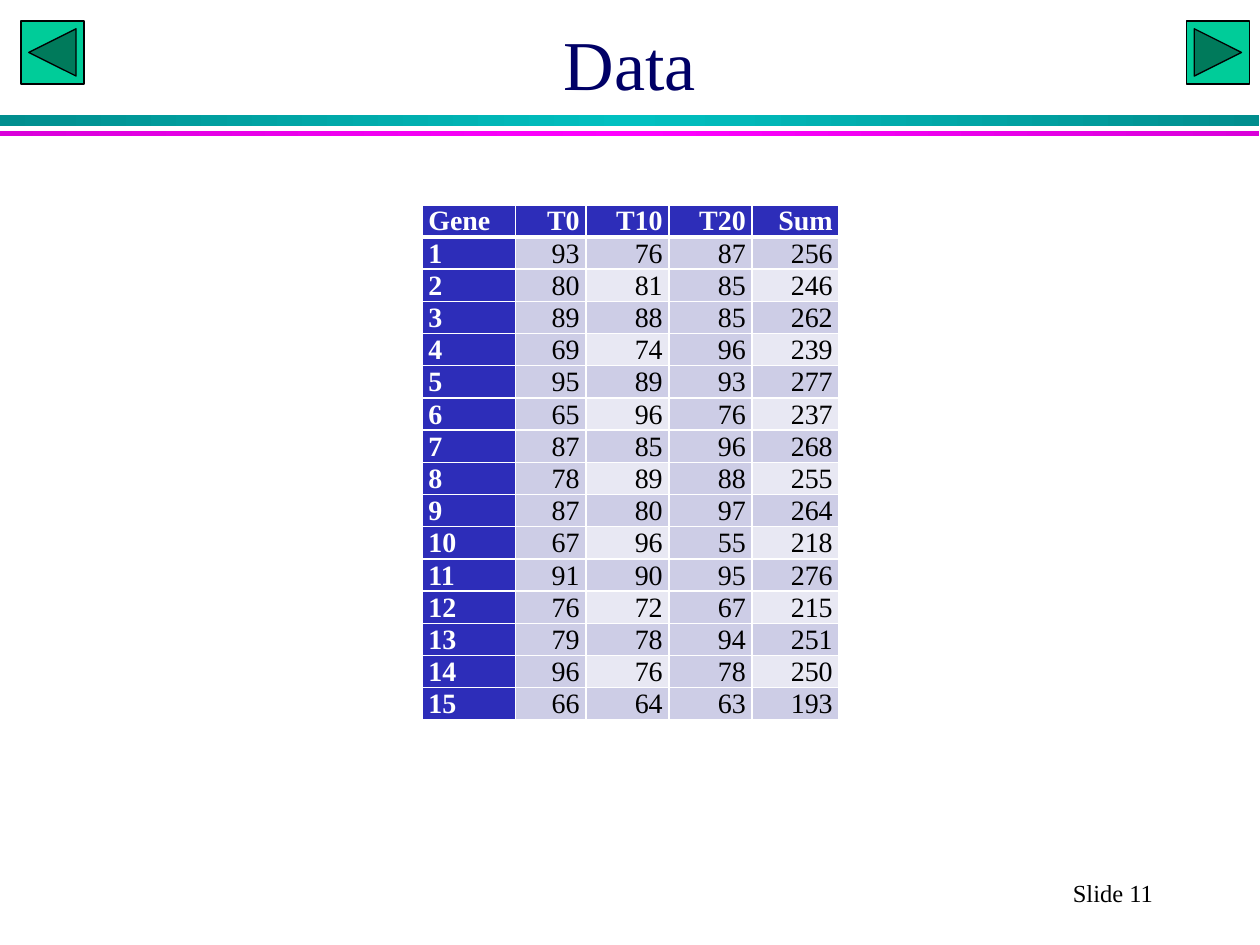
from copy import deepcopy

from lxml import etree
from pptx import Presentation
from pptx.dml.color import RGBColor
from pptx.enum.shapes import MSO_SHAPE
from pptx.enum.text import MSO_ANCHOR, PP_ALIGN
from pptx.oxml.ns import qn
from pptx.util import Pt

FONT = "Times New Roman"
NAVY = RGBColor(0x00, 0x00, 0x66)
BLACK = RGBColor(0x00, 0x00, 0x00)
WHITE = RGBColor(0xFF, 0xFF, 0xFF)
GREEN = RGBColor(0x00, 0xCC, 0x99)
DARK_TEAL = RGBColor(0x00, 0x8E, 0x8E)
TEAL = RGBColor(0x00, 0xC0, 0xC0)
DARK_MAGENTA = RGBColor(0xDA, 0x00, 0xDA)
MAGENTA = RGBColor(0xFF, 0x00, 0xFF)
HEADER_BLUE = RGBColor(0x2D, 0x2D, 0xB9)
BAND = RGBColor(0xCD, 0xCD, 0xE6)
LIGHT_BAND = RGBColor(0xE8, 0xE8, 0xF3)

HEADINGS = ["Gene", "T0", "T10", "T20", "Sum"]
MEASUREMENTS = [
    (93, 76, 87), (80, 81, 85), (89, 88, 85), (69, 74, 96), (95, 89, 93),
    (65, 96, 76), (87, 85, 96), (78, 89, 88), (87, 80, 97), (67, 96, 55),
    (91, 90, 95), (76, 72, 67), (79, 78, 94), (96, 76, 78), (66, 64, 63),
]
COLUMN_WIDTHS = [53.3, 40.3, 47.5, 47.5, 49.7]
ROW_HEIGHT = 18.4


def format_paragraph(paragraph, size, color, alignment, bold=False):
    paragraph.alignment = alignment
    paragraph.font.name = FONT
    paragraph.font.size = Pt(size)
    paragraph.font.color.rgb = color
    paragraph.font.bold = bold


def add_white_border(cell, side, width):
    """Draw one side of a cell: lnL, lnR, lnT or lnB, called in that order."""
    line = etree.SubElement(cell._tc.get_or_add_tcPr(), qn(f"a:{side}"), w=str(Pt(width)))
    fill = etree.SubElement(line, qn("a:solidFill"))
    etree.SubElement(fill, qn("a:srgbClr"), val=str(WHITE))


presentation = Presentation()
presentation.slide_width = Pt(720)
presentation.slide_height = Pt(540)
slide = presentation.slides.add_slide(presentation.slide_layouts[5])

# Title
title = slide.shapes.title
title.left, title.top, title.width, title.height = Pt(54), Pt(0), Pt(612), Pt(72)
title.text_frame.text = "Data"
title.text_frame.vertical_anchor = MSO_ANCHOR.MIDDLE
format_paragraph(title.text_frame.paragraphs[0], 40, NAVY, PP_ALIGN.CENTER)

# Gradient rules under the title, darkest at both ends
for top, height, edge, middle in [
    (66, 6, DARK_TEAL, TEAL),
    (75, 3, DARK_MAGENTA, MAGENTA),
]:
    rule = slide.shapes.add_shape(MSO_SHAPE.RECTANGLE, Pt(0), Pt(top), Pt(719.5), Pt(height))
    rule.shadow.inherit = False
    rule.line.fill.background()
    rule.fill.gradient()
    rule.fill.gradient_angle = 0
    first, last = rule.fill.gradient_stops
    first.color.rgb, first.position = edge, 0
    last.color.rgb, last.position = middle, 0.5
    stop_list = rule._element.spPr.find(qn("a:gradFill")).find(qn("a:gsLst"))
    end_stop = deepcopy(stop_list[0])
    end_stop.set("pos", "100000")
    stop_list.append(end_stop)

# Navigation buttons
for button_type, left in [
    (MSO_SHAPE.ACTION_BUTTON_BACK_OR_PREVIOUS, 12),
    (MSO_SHAPE.ACTION_BUTTON_FORWARD_OR_NEXT, 678),
]:
    button = slide.shapes.add_shape(button_type, Pt(left), Pt(12), Pt(36), Pt(36))
    button.shadow.inherit = False
    button.fill.solid()
    button.fill.fore_color.rgb = GREEN
    button.line.color.rgb = BLACK
    button.line.width = Pt(0.75)

# Gene table
rows = [HEADINGS] + [
    [gene, *values, sum(values)] for gene, values in enumerate(MEASUREMENTS, start=1)
]
table = slide.shapes.add_table(
    len(rows), len(HEADINGS), Pt(241.2), Pt(117),
    Pt(sum(COLUMN_WIDTHS)), Pt(ROW_HEIGHT * len(rows)),
).table
table.first_col = True
for column, width in zip(table.columns, COLUMN_WIDTHS):
    column.width = Pt(width)

for row_index, values in enumerate(rows):
    table.rows[row_index].height = Pt(ROW_HEIGHT)
    for column_index, value in enumerate(values):
        cell = table.cell(row_index, column_index)
        is_heading = row_index == 0 or column_index == 0
        cell.text = str(value)
        cell.vertical_anchor = MSO_ANCHOR.BOTTOM
        cell.margin_left = cell.margin_right = Pt(3.6)
        cell.margin_top, cell.margin_bottom = Pt(5.4), Pt(0)

        paragraph = cell.text_frame.paragraphs[0]
        paragraph.line_spacing = Pt(10)
        paragraph.space_before = Pt(3)
        format_paragraph(
            paragraph, 16, WHITE if is_heading else BLACK,
            PP_ALIGN.RIGHT if column_index else PP_ALIGN.LEFT, is_heading,
        )

        add_white_border(cell, "lnL", 1)
        add_white_border(cell, "lnR", 1)
        add_white_border(cell, "lnT", 3 if row_index == 1 else 1)
        add_white_border(cell, "lnB", 3 if row_index == 0 else 1)

        # Even rows are lighter in every second column
        is_light = row_index % 2 == 0 and column_index % 2 == 0
        cell.fill.solid()
        cell.fill.fore_color.rgb = (
            HEADER_BLUE if is_heading else LIGHT_BAND if is_light else BAND
        )

# Slide number
slide_number = slide.shapes.add_textbox(Pt(564), Pt(498), Pt(144), Pt(24))
slide_number.text_frame.word_wrap = True
slide_number.text_frame.text = "Slide 11"
format_paragraph(slide_number.text_frame.paragraphs[0], 14, BLACK, PP_ALIGN.CENTER)

presentation.save("out.pptx")
